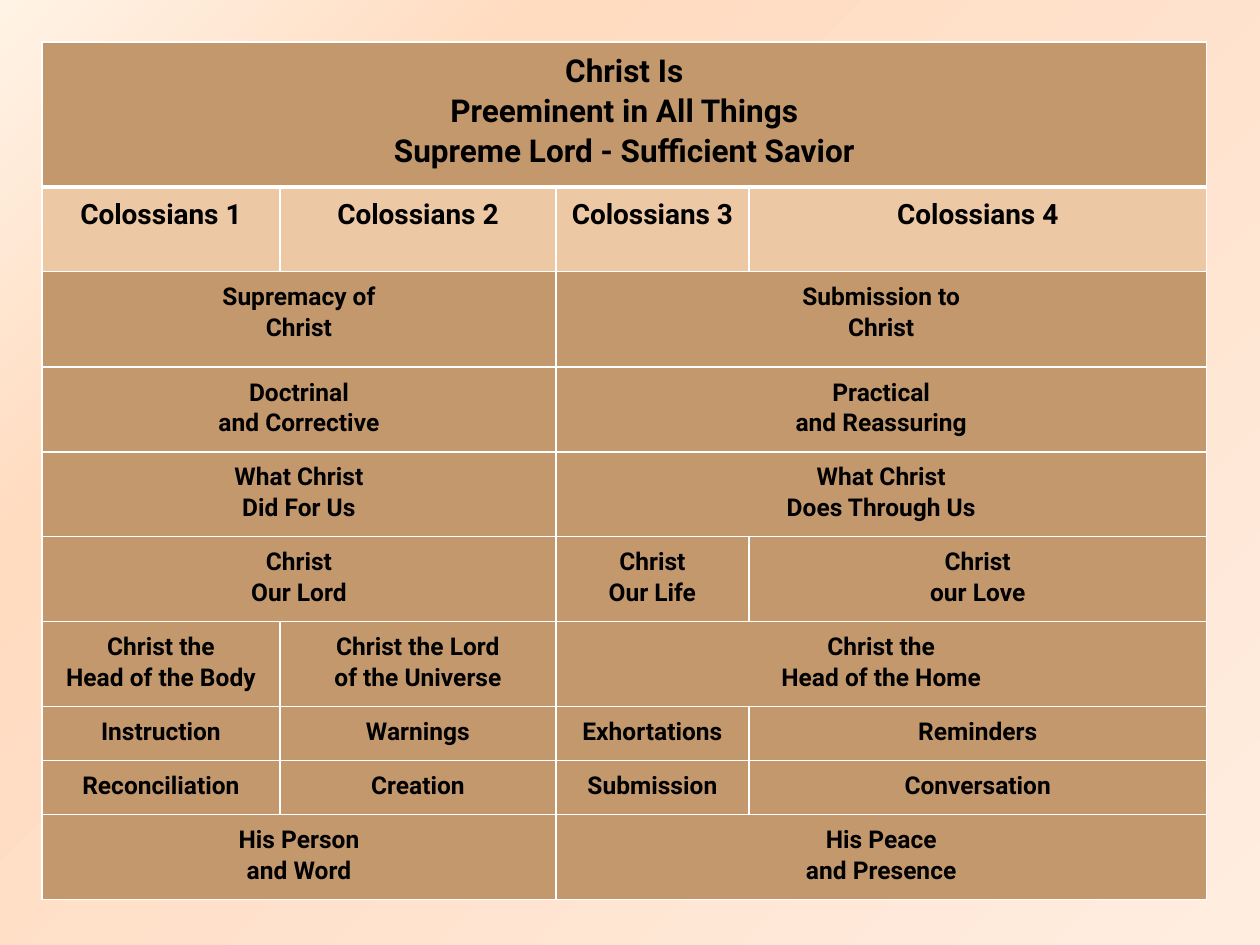
from lxml.etree import SubElement
from pptx import Presentation
from pptx.dml.color import RGBColor
from pptx.enum.text import PP_ALIGN
from pptx.oxml.ns import qn
from pptx.util import Pt

BLACK = RGBColor(0x00, 0x00, 0x00)
WHITE = RGBColor(0xFF, 0xFF, 0xFF)
TAN = RGBColor(0xC3, 0x98, 0x6D)
SAND = RGBColor(0xEC, 0xC8, 0xA4)
CREAM = RGBColor(0xFF, 0xF3, 0xE5)
PEACH = RGBColor(0xFF, 0xDB, 0xC0)
BLUSH = RGBColor(0xFF, 0xED, 0xE0)

COLUMN_WIDTHS = [136, 157.7, 110.3, 261.5]
TWO_LINES, ONE_LINE = 48.5, 31
TITLE = "Christ Is\nPreeminent in All Things\nSupreme Lord - Sufficient Savior"

ROWS = [
    (82.8, [TITLE, None, None, None]),
    (48.2, ["Colossians 1", "Colossians 2", "Colossians 3", "Colossians 4"]),
    (54.7, ["Supremacy of\nChrist", None, "Submission to\nChrist", None]),
    (TWO_LINES, ["Doctrinal\nand Corrective", None, "Practical\nand Reassuring", None]),
    (TWO_LINES, ["What Christ\nDid For Us", None, "What Christ\nDoes Through Us", None]),
    (TWO_LINES, ["Christ\nOur Lord", None, "Christ\nOur Life", "Christ\nour Love"]),
    (TWO_LINES, ["Christ the\nHead of the Body", "Christ the Lord\nof the Universe",
                 "Christ the\nHead of the Home", None]),
    (ONE_LINE, ["Instruction", "Warnings", "Exhortations", "Reminders"]),
    (ONE_LINE, ["Reconciliation", "Creation", "Submission", "Conversation"]),
    (TWO_LINES, ["His Person\nand Word", None, "His Peace\nand Presence", None]),
]
ROW_STYLES = {0: (18, TAN, 6), 1: (16, SAND, 0)}
BODY_STYLE = (14, TAN, 0)


class SlideBuilder:
    font = "Roboto"
    margin = Pt(5.3)
    line_spacing = 1.07

    def __init__(self, slide):
        self.slide = slide

    def background(self, stops, angle):
        fill = self.slide.background.fill
        fill.gradient()
        fill.gradient_angle = 360 - angle
        stop_list = next(self.slide.element.iter(qn("a:gsLst")))
        for stop in list(stop_list):
            stop_list.remove(stop)
        for position, color, opacity in stops:
            stop = SubElement(stop_list, qn("a:gs"), pos=str(position * 1000))
            rgb = SubElement(stop, qn("a:srgbClr"), val=str(color))
            if opacity < 100:
                SubElement(rgb, qn("a:alpha"), val=str(opacity * 1000))

    def borders(self, cell, top, bottom):
        properties = cell._tc.get_or_add_tcPr()
        for side, width in (("L", 1), ("R", 1), ("T", top), ("B", bottom)):
            line = SubElement(properties, qn(f"a:ln{side}"), w=str(Pt(width)))
            fill = SubElement(line, qn("a:solidFill"))
            SubElement(fill, qn("a:srgbClr"), val=str(WHITE))

    def cell_text(self, cell, text, size, space):
        paragraph = cell.text_frame.paragraphs[0]
        paragraph.text = text
        paragraph.alignment = PP_ALIGN.CENTER
        paragraph.line_spacing = self.line_spacing
        paragraph.space_before = paragraph.space_after = Pt(space)
        for run in paragraph.runs:
            run.font.name = self.font
            run.font.size = Pt(size)
            run.font.bold = True
            run.font.color.rgb = BLACK

    def table(self, left, top, widths, rows):
        heights = [height for height, _ in rows]
        frame = self.slide.shapes.add_table(
            len(rows), len(widths), Pt(left), Pt(top), Pt(sum(widths)), Pt(sum(heights)))
        table = frame.table
        table.first_row = table.horz_banding = False
        for column, width in zip(table.columns, widths):
            column.width = Pt(width)
        for index, (height, texts) in enumerate(rows):
            table.rows[index].height = Pt(height)
            size, color, space = ROW_STYLES.get(index, BODY_STYLE)
            for number, text in enumerate(texts):
                cell = table.cell(index, number)
                cell.margin_left = cell.margin_right = self.margin
                cell.margin_top = cell.margin_bottom = self.margin
                self.borders(cell, 3 if index == 1 else 1, 3 if index == 0 else 1)
                cell.fill.solid()
                cell.fill.fore_color.rgb = color
                if text is not None:
                    self.cell_text(cell, text, size, space)
            self.merge_row(table, index, texts)

    def merge_row(self, table, index, texts):
        starts = [number for number, text in enumerate(texts) if text is not None]
        for start, end in zip(starts, starts[1:] + [len(texts)]):
            if end - start > 1:
                table.cell(index, start).merge(table.cell(index, end - 1))


def main():
    presentation = Presentation()
    presentation.slide_width, presentation.slide_height = Pt(720), Pt(540)
    builder = SlideBuilder(presentation.slides.add_slide(presentation.slide_layouts[6]))
    builder.background([(0, CREAM, 50), (25, PEACH, 100), (100, BLUSH, 100)], 45)
    builder.table(24, 24, COLUMN_WIDTHS, ROWS)
    presentation.save("out.pptx")


if __name__ == "__main__":
    main()
